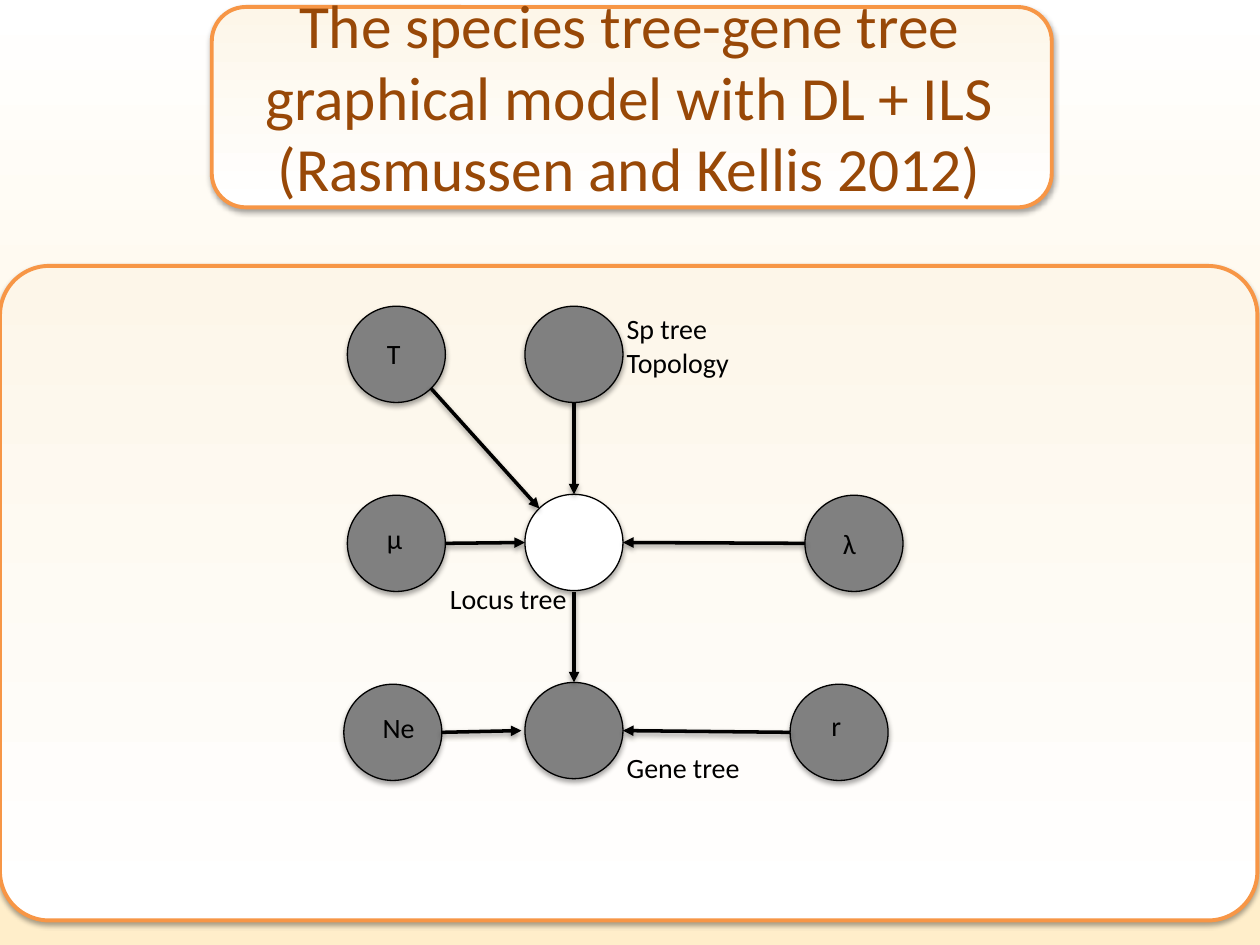
from dataclasses import dataclass
from math import cos, radians, sin

from lxml.etree import SubElement
from pptx import Presentation
from pptx.dml.color import RGBColor
from pptx.enum.shapes import MSO_CONNECTOR as Connector, MSO_SHAPE as Preset
from pptx.enum.text import MSO_ANCHOR as Anchor, MSO_AUTO_SIZE as AutoSize, PP_ALIGN as Align
from pptx.oxml.ns import qn
from pptx.util import Pt


@dataclass(frozen=True)
class Theme:
    font: str = "Calibri"
    title_size: float = 35.1
    label_size: float = 16
    title: str = "984807"
    accent: str = "F79646"
    observed: str = "808080"
    hidden: str = "FFFFFF"
    ink: str = "000000"
    background: tuple = ("FFFFFF", "FFEECA")
    panel: tuple = ("FFFFFF", "FDF6E9")


THEME = Theme()
NODE_WIDTH, NODE_HEIGHT = 56, 55
TOP = 175
CENTRE_ROWS = [TOP + 107.5 * row for row in range(3)]
OUTER_ROWS = [TOP + 108 * row for row in range(3)]


def rgb(value):
    return RGBColor.from_string(value)


def fill_gradient(fill, colors, angle):
    fill.gradient()
    fill.gradient_angle = angle
    for stop, color in zip(fill.gradient_stops, colors):
        stop.color.rgb = rgb(color)


def set_line(line, color, width):
    line.color.rgb = rgb(color)
    line.width = Pt(width)


def add_shadow(shape, opacity, distance):
    """Append a soft downward shadow; call after fill and line are set."""
    effects = SubElement(shape.element.spPr, qn("a:effectLst"))
    shadow = SubElement(effects, qn("a:outerShdw"), blurRad=str(Pt(3.1)),
                        dist=str(Pt(distance)), dir="5400000", rotWithShape="0")
    color = SubElement(shadow, qn("a:srgbClr"), val=THEME.ink)
    SubElement(color, qn("a:alpha"), val=str(opacity * 1000))


def add_text(paragraph, text, size, color):
    run = paragraph.add_run()
    run.text = text
    run.font.name = THEME.font
    run.font.size = Pt(size)
    run.font.color.rgb = rgb(color)


def add_panel(shapes, left, top, width, height, rounding):
    panel = shapes.add_shape(Preset.ROUNDED_RECTANGLE, Pt(left), Pt(top), Pt(width), Pt(height))
    panel.adjustments[0] = rounding
    fill_gradient(panel.fill, THEME.panel, 90)
    set_line(panel.line, THEME.accent, 2.25)
    add_shadow(panel, 35, 1.8)
    return panel


def add_title(slide, panel, text):
    """Place the title just in front of its panel."""
    title = slide.shapes.title
    title.left, title.top, title.width, title.height = Pt(101), Pt(16.5), Pt(517), Pt(80)
    panel.element.addnext(title.element)
    frame = title.text_frame
    frame.word_wrap = True
    frame.auto_size = AutoSize.NONE
    frame.vertical_anchor = Anchor.MIDDLE
    paragraph = frame.paragraphs[0]
    paragraph.alignment = Align.CENTER
    paragraph.line_spacing = 0.97
    add_text(paragraph, text, THEME.title_size, THEME.title)


def add_node(shapes, left, top, color=THEME.observed):
    node = shapes.add_shape(Preset.OVAL, Pt(left), Pt(top), Pt(NODE_WIDTH), Pt(NODE_HEIGHT))
    node.fill.solid()
    node.fill.fore_color.rgb = rgb(color)
    set_line(node.line, THEME.ink, 0.75)
    add_shadow(node, 35, 1.8)
    return node


def add_label(shapes, left, top, *lines):
    height = 7.2 + 19.5 * len(lines)
    label = shapes.add_textbox(Pt(left), Pt(top), Pt(198), Pt(height))
    frame = label.text_frame
    frame.word_wrap = True
    frame.auto_size = AutoSize.SHAPE_TO_FIT_TEXT
    for index, line in enumerate(lines):
        paragraph = frame.add_paragraph() if index else frame.paragraphs[0]
        add_text(paragraph, line, THEME.label_size, THEME.ink)


def edge(node, angle, gap=0):
    """Point on the node's outline, clockwise in degrees from its right side."""
    radius_x, radius_y = node.width / 2 + Pt(gap), node.height / 2 + Pt(gap)
    return (round(node.left + node.width / 2 + radius_x * cos(radians(angle))),
            round(node.top + node.height / 2 + radius_y * sin(radians(angle))))


def add_arrow(shapes, start, end):
    arrow = shapes.add_connector(Connector.STRAIGHT, *start, *end)
    set_line(arrow.line, THEME.ink, 2)
    SubElement(arrow.element.spPr.find(qn("a:ln")), qn("a:tailEnd"), type="triangle")
    add_shadow(arrow, 38, 1.6)


def add_tree_column(shapes):
    """Group species, locus and gene trees; return the locus and gene nodes."""
    column = shapes.add_group_shape().shapes
    colors = (THEME.observed, THEME.hidden, THEME.observed)
    species, locus, gene = [add_node(column, 300, top, color)
                            for top, color in zip(CENTRE_ROWS, colors)]
    add_arrow(column, edge(species, 90), edge(locus, 270))
    add_arrow(column, edge(locus, 90, gap=1), edge(gene, 270))
    add_label(column, 351, 174.5, "Sp tree", "Topology")
    add_label(column, 250, 329, "Locus tree")
    add_label(column, 351, 425.5, "Gene tree")
    return locus, gene


def add_parameter(shapes, text, position, label_position, start_angle, end):
    node = add_node(shapes, *position)
    add_arrow(shapes, edge(node, start_angle), end)
    add_label(shapes, *label_position, text)


def main():
    presentation = Presentation()
    presentation.slide_width, presentation.slide_height = Pt(720), Pt(540)
    slide = presentation.slides.add_slide(presentation.slide_layouts[5])
    fill_gradient(slide.background.fill, THEME.background, 270)
    shapes = slide.shapes

    header = add_panel(shapes, 121, 4, 480, 114.5, 0.17)
    add_title(slide, header, "The species tree-gene tree graphical model with DL + ILS "
                             "(Rasmussen and Kellis 2012)")
    add_panel(shapes, 0, 152, 718.5, 374, 0.075)

    locus, gene = add_tree_column(shapes)
    first, second, third = OUTER_ROWS
    parameters = [
        ("T", (198.5, first), (214, 188.5), 45, edge(locus, 225)),
        ("μ", (198.5, second), (214, 294.5), 0, edge(locus, 180)),
        ("λ", (460, second), (474.5, 297.5), 180, edge(locus, 0)),
        ("Ne", (196.5, third), (211.5, 402.5), 0, edge(gene, 180, gap=2)),
        ("r", (451.5, third), (468, 401.5), 180, edge(gene, 0)),
    ]
    for parameter in parameters:
        add_parameter(shapes, *parameter)

    presentation.save("out.pptx")


if __name__ == "__main__":
    main()
